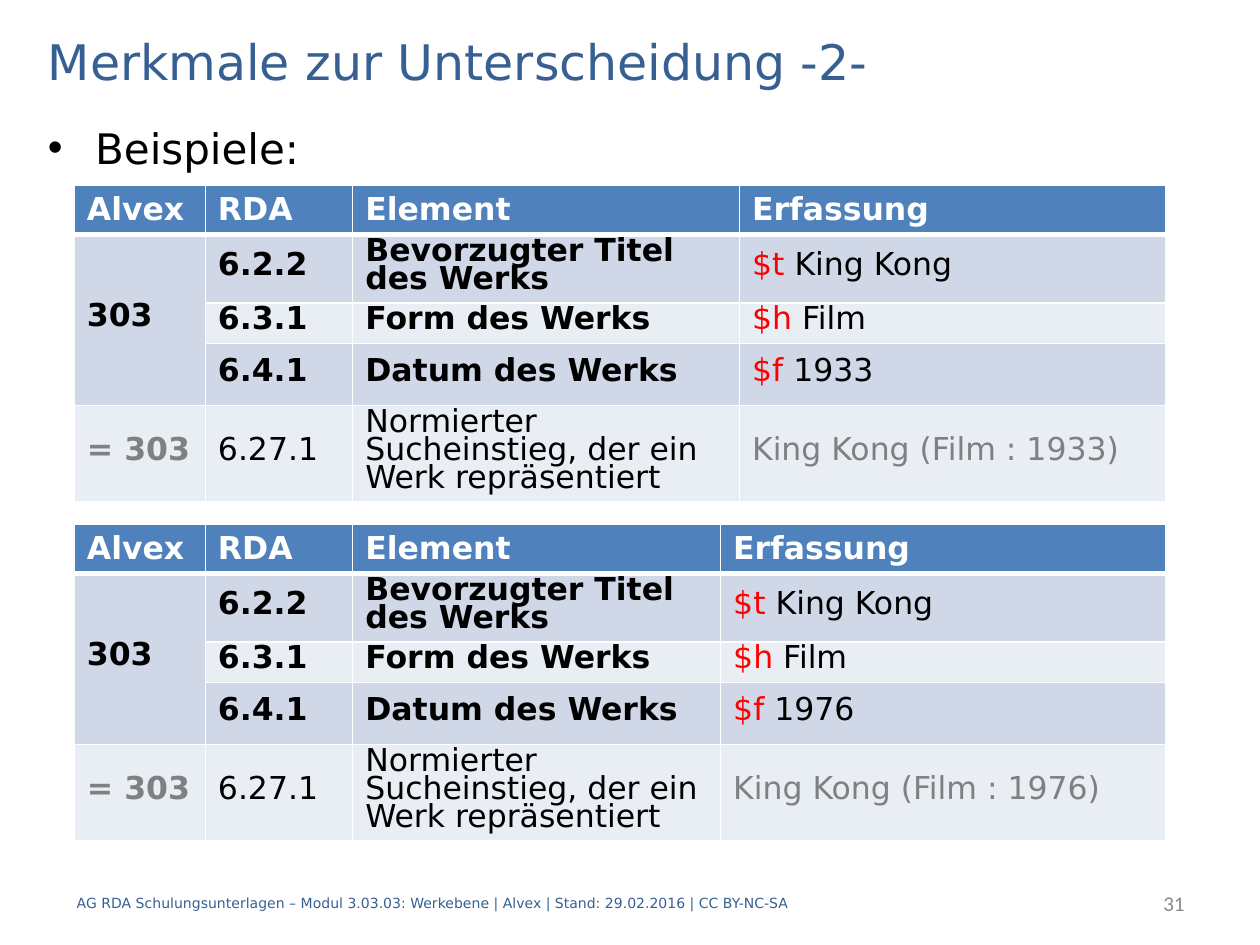
from dataclasses import dataclass

from lxml import etree
from pptx import Presentation
from pptx.dml.color import RGBColor
from pptx.enum.text import MSO_ANCHOR, MSO_AUTO_SIZE, PP_ALIGN
from pptx.oxml.ns import qn
from pptx.util import Inches, Pt

LEFT, RIGHT = PP_ALIGN.LEFT, PP_ALIGN.RIGHT
TOP, MIDDLE = MSO_ANCHOR.TOP, MSO_ANCHOR.MIDDLE
NO_AUTOFIT = MSO_AUTO_SIZE.NONE

NAVY = RGBColor(0x37, 0x60, 0x92)
BLUE = RGBColor(0x4F, 0x81, 0xBD)
BAND_DARK = RGBColor(0xD0, 0xD8, 0xE8)
BAND_LIGHT = RGBColor(0xE9, 0xED, 0xF4)
WHITE = RGBColor(0xFF, 0xFF, 0xFF)
BLACK = RGBColor(0, 0, 0)
RED = RGBColor(0xFF, 0, 0)
GRAY = RGBColor(0x80, 0x80, 0x80)
NUMBER_GRAY = RGBColor(0x89, 0x89, 0x89)

FONT = "DejaVu Sans"
HEADERS = ("Alvex", "RDA", "Element", "Erfassung")
ROW_HEIGHTS = (0.36, 0.49, 0.32, 0.49, 0.49)
TABLE_LEFT, TABLE_WIDTH, TABLE_HEIGHT = 0.59, 8.66, 2.52


@dataclass
class Example:
    top: float
    col_widths: tuple[float, ...]
    title: str
    form: str
    year: str


@dataclass
class Run:
    text: str
    color: RGBColor = BLACK
    bold: bool = False


EXAMPLES = (
    Example(1.47, (1.04, 1.17, 3.07, 3.38), "King Kong", "Film", "1933"),
    Example(4.16, (1.04, 1.17, 2.92, 3.53), "King Kong", "Film", "1976"),
)


def add_text(p, text: str, *, size=18, color=BLACK, bold=False, font=FONT) -> None:
    r = p.add_run()
    r.text = text
    r.font.name = font
    r.font.size = Pt(size)
    r.font.bold = bold
    r.font.color.rgb = color


def place(sp, left: float, top: float, width: float, height: float, anchor):
    """Set position and text frame; return the first paragraph."""
    sp.left, sp.top = Inches(left), Inches(top)
    sp.width, sp.height = Inches(width), Inches(height)
    tf = sp.text_frame
    tf.word_wrap = True
    tf.auto_size = NO_AUTOFIT
    tf.vertical_anchor = anchor
    return tf.paragraphs[0]


def set_borders(cell, bottom_width: float) -> None:
    tc_pr = cell._tc.get_or_add_tcPr()
    widths = {"a:lnL": 1, "a:lnR": 1, "a:lnT": 1, "a:lnB": bottom_width}
    for i, (tag, width) in enumerate(widths.items()):
        ln = etree.Element(qn(tag), w=str(Pt(width)))
        fill = etree.SubElement(ln, qn("a:solidFill"))
        etree.SubElement(fill, qn("a:srgbClr"), val=str(WHITE))
        tc_pr.insert(i, ln)


def fill_cell(cell, runs: tuple[Run, ...], fill: RGBColor, is_header: bool) -> None:
    cell.fill.solid()
    cell.fill.fore_color.rgb = fill
    set_borders(cell, 3 if is_header else 1)
    p = cell.text_frame.paragraphs[0]
    if not is_header:
        cell.vertical_anchor = MIDDLE
        p.line_spacing = Pt(16)
        p.space_before = p.space_after = Pt(6)
    for run in runs:
        add_text(p, run.text, color=run.color, bold=run.bold)


def example_rows(ex: Example) -> list[list[tuple[Run, ...]]]:
    """Return the header, the three element rows and the access point row."""
    elements = (
        ("303", "6.2.2", "Bevorzugter Titel des Werks", "$t", ex.title),
        ("", "6.3.1", "Form des Werks", "$h", ex.form),
        ("", "6.4.1", "Datum des Werks", "$f", ex.year),
    )
    rows = [[(Run(h, WHITE, True),) for h in HEADERS]]
    for *labels, code, value in elements:
        cells = [(Run(t, bold=True),) if t else () for t in labels]
        rows.append(cells + [(Run(code + " ", RED), Run(value))])
    rows.append([
        (Run("= 303", GRAY, True),),
        (Run("6.27.1"),),
        (Run("Normierter Sucheinstieg, der ein Werk repräsentiert"),),
        (Run(f"{ex.title} ({ex.form} : {ex.year})", GRAY),),
    ])
    return rows


def add_example_table(s, ex: Example) -> None:
    rows = example_rows(ex)
    table = s.shapes.add_table(
        len(rows), len(HEADERS), Inches(TABLE_LEFT), Inches(ex.top),
        Inches(TABLE_WIDTH), Inches(TABLE_HEIGHT),
    ).table
    for col, width in zip(table.columns, ex.col_widths):
        col.width = Inches(width)
    for row, height in zip(table.rows, ROW_HEIGHTS):
        row.height = Inches(height)
    for i, row in enumerate(rows):
        band = BAND_DARK if i % 2 else BAND_LIGHT
        for j, runs in enumerate(row):
            fill = BLUE if i == 0 else BAND_DARK if j == 0 and i < 4 else band
            fill_cell(table.cell(i, j), runs, fill, i == 0)
    table.cell(1, 0).merge(table.cell(3, 0))


def add_label(s, left: float, width: float, text: str, align=LEFT, **fmt) -> None:
    sp = s.shapes.add_textbox(0, 0, 0, 0)
    p = place(sp, left, 6.97, width, 0.4, MIDDLE)
    p.alignment = align
    add_text(p, text, **fmt)


def main() -> None:
    prs = Presentation()
    prs.slide_width, prs.slide_height = Inches(10), Inches(7.5)
    s = prs.slides.add_slide(prs.slide_layouts[1])

    p = place(s.shapes.title, 0.28, 0.2, 9.45, 0.56, MIDDLE)
    p.alignment = LEFT
    add_text(p, "Merkmale zur Unterscheidung -2-", size=28, color=NAVY)

    p = place(s.placeholders[1], 0.28, 0.92, 9.45, 5.98, TOP)
    add_text(p, "Beispiele:", size=24)

    add_label(
        s, 0.51, 6.69,
        "AG RDA Schulungsunterlagen – Modul 3.03.03: Werkebene | Alvex | "
        "Stand: 29.02.2016 | CC BY-NC-SA",
        size=8, color=NAVY,
    )
    add_label(s, 7.91, 1.59, "31", RIGHT, size=12, color=NUMBER_GRAY, font="Calibri")

    for ex in EXAMPLES:
        add_example_table(s, ex)
    prs.save("out.pptx")


if __name__ == "__main__":
    main()
